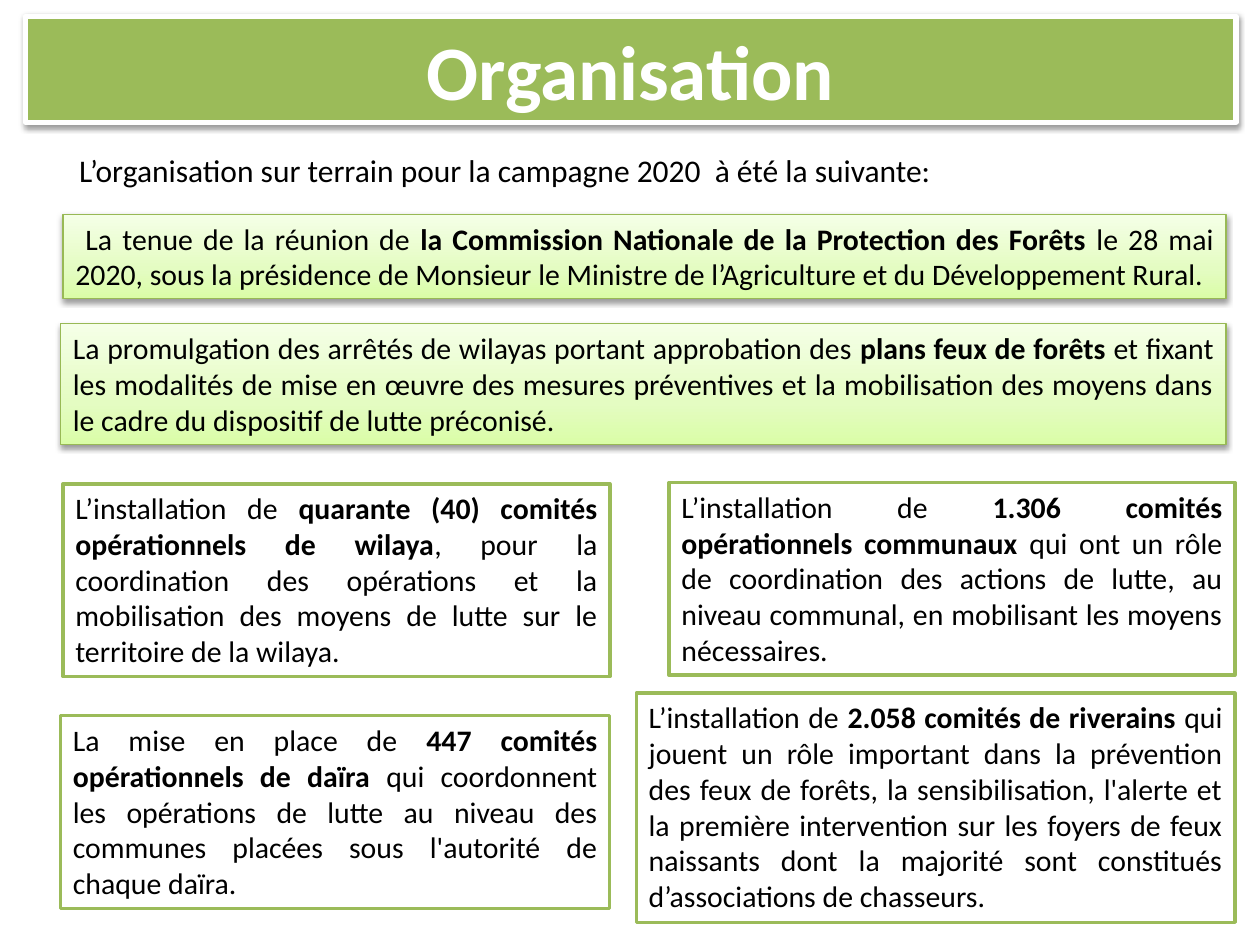
import copy

import pptx
import pptx.dml.color
import pptx.enum.shapes
import pptx.enum.text
import pptx.oxml
import pptx.oxml.ns
import pptx.util

COLOURS = {
    "green": "9BBB59",
    "edge": "98B955",
    "white": "FFFFFF",
    "text": "000000",
}
GRADIENT = [(0, "DAFDA7"), (0.35, "E4FCC2"), (1, "F5FFE7")]
COLUMNS, ROWS = 100, 75
ALIGN = pptx.enum.text.PP_ALIGN

# Each box: left, top, width, height in grid units; plain, bold, plain text
MEASURES = [
    ((5, 17, 92.3, 6.7), (
        " La tenue de la réunion de ",
        "la Commission Nationale de la Protection des Forêts ",
        "le 28 mai 2020, sous la présidence de Monsieur le Ministre de "
        "l’Agriculture et du Développement Rural.")),
    ((4.8, 25.7, 92.5, 9.6), (
        "La promulgation des arrêtés de wilayas portant approbation des ",
        "plans feux de forêts ",
        "et fixant les modalités de mise en œuvre des mesures préventives et la "
        "mobilisation des moyens dans le cadre du dispositif de lutte préconisé.")),
]
COMMITTEES = [
    ((5, 38.4, 43.4, 15.3), (
        "L’installation de ",
        "quarante (40) comités opérationnels de wilaya",
        ", pour la coordination des opérations et la mobilisation des moyens de "
        "lutte sur le territoire de la wilaya.")),
    ((4.8, 56.8, 43.6, 15.3), (
        "La mise en place de ",
        "447 comités opérationnels de daïra",
        " qui coordonnent les opérations de lutte au niveau des communes placées "
        "sous l'autorité de chaque daïra. ")),
    ((50.5, 55, 47.5, 18.2), (
        "L’installation de ",
        "2.058 comités de riverains ",
        "qui jouent un rôle important dans la prévention des feux de forêts, la "
        "sensibilisation, l'alerte et la première intervention sur les foyers de "
        "feux naissants dont la majorité sont constitués d’associations de "
        "chasseurs.")),
    ((53.1, 38.3, 44.9, 15.3), (
        "L’installation de ",
        "1.306 comités opérationnels communaux",
        " qui ont un rôle de coordination des actions de lutte, au niveau "
        "communal, en mobilisant les moyens nécessaires. ")),
]


def rgb(name):
    return pptx.dml.color.RGBColor.from_string(COLOURS.get(name, name))


class SlideBuilder:
    font_name = "Calibri"

    def __init__(self, presentation):
        self.column = presentation.slide_width / COLUMNS
        self.row = presentation.slide_height / ROWS
        self.slide = presentation.slides.add_slide(presentation.slide_layouts[5])

    def place(self, area):
        """Turn grid units into lengths."""
        left, top, width, height = area
        return (round(left * self.column), round(top * self.row),
                round(width * self.column), round(height * self.row))

    def format_paragraph(self, paragraph, size, colour="text", align=ALIGN.LEFT):
        paragraph.alignment = align
        paragraph.font.name = self.font_name
        paragraph.font.size = pptx.util.Pt(size)
        paragraph.font.color.rgb = rgb(colour)

    def outline(self, shape, colour, width):
        shape.line.color.rgb = rgb(colour)
        shape.line.width = pptx.util.Pt(width)

    def fill_solid(self, shape, colour):
        shape.fill.solid()
        shape.fill.fore_color.rgb = rgb(colour)

    def fill_gradient(self, shape):
        shape.fill.gradient()
        shape.fill.gradient_angle = 90
        stop_list = shape._element.spPr.find(".//" + pptx.oxml.ns.qn("a:gsLst"))
        stop_list.insert(1, copy.deepcopy(stop_list[0]))
        for stop, (position, colour) in zip(shape.fill.gradient_stops, GRADIENT):
            stop.position = position
            stop.color.rgb = rgb(colour)

    def add_shadow(self, shape):
        shape.shadow.inherit = False
        effects = shape._element.spPr.find(pptx.oxml.ns.qn("a:effectLst"))
        effects.append(pptx.oxml.parse_xml(
            f'<a:outerShdw {pptx.oxml.ns.nsdecls("a")} blurRad="40000" '
            'dist="20000" dir="5400000" rotWithShape="0">'
            '<a:srgbClr val="000000"><a:alpha val="38000"/></a:srgbClr>'
            '</a:outerShdw>'))

    def title(self, area, text):
        title = self.slide.shapes.title
        title.left, title.top, title.width, title.height = self.place(area)
        self.fill_solid(title, "green")
        self.outline(title, "white", 3)
        self.add_shadow(title)
        title.text_frame.text = text
        title.text_frame.vertical_anchor = pptx.enum.text.MSO_ANCHOR.MIDDLE
        paragraph = title.text_frame.paragraphs[0]
        self.format_paragraph(paragraph, 44, "white", ALIGN.CENTER)
        paragraph.font.bold = True

    def introduction(self, area, text):
        frame = self.slide.shapes.add_textbox(*self.place(area)).text_frame
        frame.word_wrap = True
        frame.text = text
        self.format_paragraph(frame.paragraphs[0], 18)

    def box(self, area, texts):
        shape = self.slide.shapes.add_shape(
            pptx.enum.shapes.MSO_SHAPE.RECTANGLE, *self.place(area))
        shape.shadow.inherit = False
        frame = shape.text_frame
        frame.word_wrap = True
        frame.vertical_anchor = pptx.enum.text.MSO_ANCHOR.TOP
        paragraph = frame.paragraphs[0]
        self.format_paragraph(paragraph, 17, align=ALIGN.JUSTIFY)
        for index, text in enumerate(texts):
            run = paragraph.add_run()
            run.text = text
            run.font.bold = index == 1
        return shape

    def measure(self, area, texts):
        shape = self.box(area, texts)
        self.fill_gradient(shape)
        self.outline(shape, "edge", 0.75)
        self.add_shadow(shape)

    def committee(self, area, texts):
        shape = self.box(area, texts)
        self.fill_solid(shape, "white")
        self.outline(shape, "green", 2)


def main():
    presentation = pptx.Presentation()
    presentation.slide_width = pptx.util.Inches(10)
    presentation.slide_height = pptx.util.Inches(7.5)
    builder = SlideBuilder(presentation)
    builder.title((2, 1.3, 96.1, 8.4), "Organisation")
    builder.introduction(
        (5.3, 11.5, 89.7, 4),
        "L’organisation sur terrain pour la campagne 2020  à été la suivante:")
    for area, texts in MEASURES:
        builder.measure(area, texts)
    for area, texts in COMMITTEES:
        builder.committee(area, texts)
    presentation.save("out.pptx")


if __name__ == "__main__":
    main()
